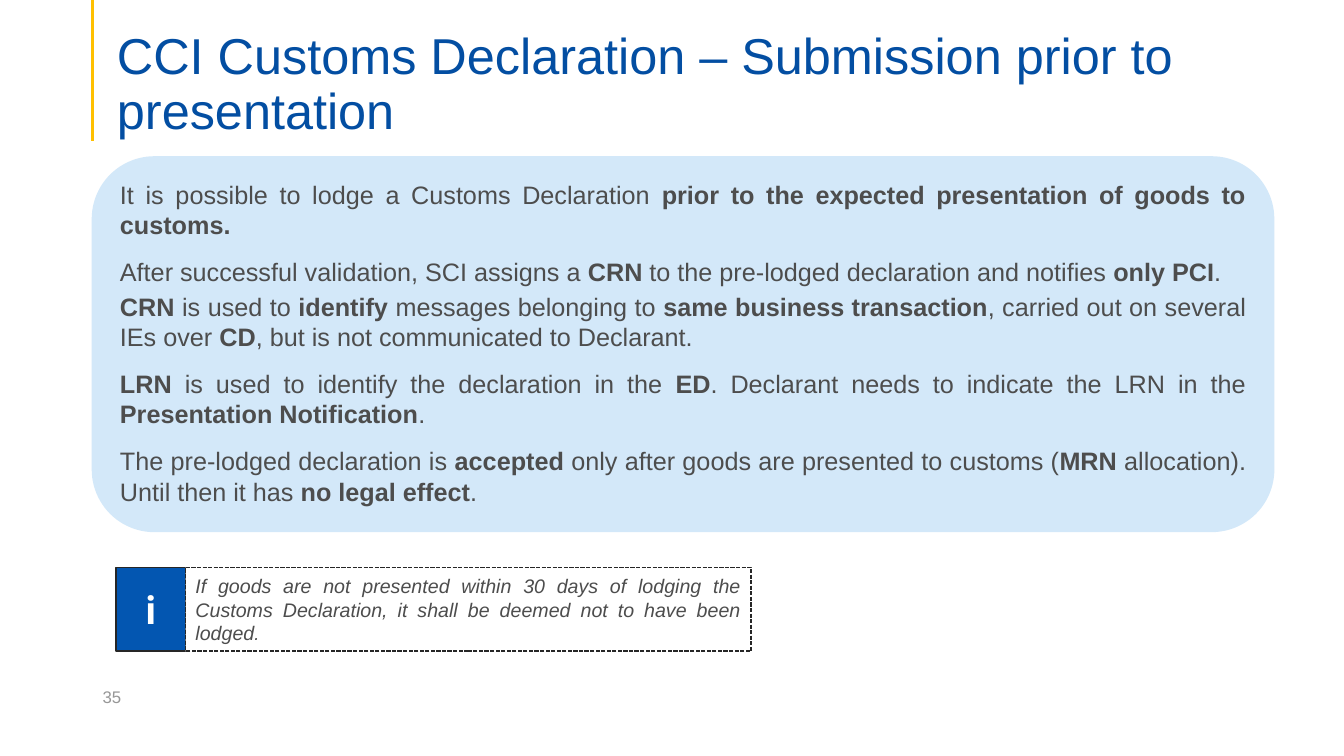
from lxml import etree
from pptx import Presentation
from pptx.dml.color import RGBColor
from pptx.enum.dml import MSO_LINE
from pptx.enum.shapes import MSO_CONNECTOR, MSO_SHAPE
from pptx.enum.text import MSO_ANCHOR, MSO_AUTO_SIZE, PP_ALIGN
from pptx.oxml.ns import qn
from pptx.util import Inches, Pt

RECT, ROUND = MSO_SHAPE.RECTANGLE, MSO_SHAPE.ROUNDED_RECTANGLE
TOP, MIDDLE, BOTTOM = MSO_ANCHOR.TOP, MSO_ANCHOR.MIDDLE, MSO_ANCHOR.BOTTOM
LEFT, CENTER, JUSTIFY = PP_ALIGN.LEFT, PP_ALIGN.CENTER, PP_ALIGN.JUSTIFY
DASH = MSO_LINE.SQUARE_DOT

TITLE = "CCI Customs Declaration – Submission prior to presentation"
BOLD_MARK = "**"
RULES = [
    (0, "It is possible to lodge a Customs Declaration **prior to the expected "
        "presentation of goods to customs.**"),
    (12, "After successful validation, SCI assigns a **CRN** to the pre-lodged "
         "declaration and notifies **only PCI**."),
    (3, "**CRN** is used to **identify** messages belonging to **same business "
        "transaction**, carried out on several IEs over **CD**, but is not "
        "communicated to Declarant."),
    (12, "**LRN** is used to identify the declaration in the **ED**. Declarant needs "
         "to indicate the LRN in the **Presentation Notification**."),
    (12, "The pre-lodged declaration is **accepted** only after goods are presented to "
         "customs (**MRN** allocation). Until then it has **no legal effect**."),
]
NOTE = ("If goods are not presented within 30 days of lodging the Customs Declaration, "
        "it shall be deemed not to have been lodged")
PAGE = "35"

BLUE, ICON_BLUE, PALE_BLUE = "034EA2", "0356B1", "D3E8F9"
GOLD, DARK, GREY, LIGHT_GREY, WHITE = "FFC000", "262626", "4D4D4D", "979797", "FFFFFF"
NOTE_TOP, NOTE_H = 5.63, 0.83
ICON_X, ICON_W, NOTE_W = 1.15, 0.69, 5.61


def rgb(value):
    return RGBColor.from_string(value)


def style(r, size, color, bold=False, italic=False, name="Arial"):
    r.font.size = Pt(size)
    r.font.name = name
    r.font.bold = bold
    r.font.italic = italic
    r.font.color.rgb = rgb(color)


def add_run(p, text, *args, **kwargs):
    r = p.add_run()
    r.text = text
    style(r, *args, **kwargs)


def frame(sp, anchor, align):
    tf = sp.text_frame
    tf.word_wrap = True
    tf.vertical_anchor = anchor
    tf.paragraphs[0].alignment = align
    return tf


def add_box(shapes, kind, x, y, w, h, fill, line=None):
    sp = shapes.add_shape(kind, Inches(x), Inches(y), Inches(w), Inches(h))
    sp.shadow.inherit = False
    sp.fill.solid()
    sp.fill.fore_color.rgb = rgb(fill)
    if line:
        sp.line.color.rgb = rgb(line)
        sp.line.width = Pt(1)
    else:
        sp.line.fill.background()
    return sp


def add_title(slide):
    sp = slide.shapes.title
    sp.left, sp.top, sp.width, sp.height = map(Inches, (1.06, 0.53, 12.03, 0.86))
    tf = frame(sp, BOTTOM, LEFT)
    tf.auto_size = MSO_AUTO_SIZE.NONE
    tf.margin_bottom = 0
    p = tf.paragraphs[0]
    p.line_spacing = 0.9
    add_run(p, TITLE, 36, BLUE)


def add_accent(slide):
    line = slide.shapes.add_connector(
        MSO_CONNECTOR.STRAIGHT, Inches(0.92), 0, Inches(0.92), Inches(1.4))
    line.line.color.rgb = rgb(GOLD)
    line.line.width = Pt(2.25)
    etree.SubElement(line._element.spPr, qn("a:effectLst"))


def add_rules(slide):
    panel = add_box(slide.shapes, ROUND, 0.91, 1.55, 11.73, 3.73, PALE_BLUE)
    tf = frame(panel, TOP, JUSTIFY)
    for i, (before, text) in enumerate(RULES):
        p = tf.add_paragraph() if i else tf.paragraphs[0]
        p.alignment = JUSTIFY
        if before:
            p.space_before = Pt(before)
        for j, part in enumerate(text.split(BOLD_MARK)):
            if part:
                add_run(p, part, 18, GREY, bold=j % 2 == 1)


def add_note(slide):
    shapes = slide.shapes.add_group_shape().shapes
    icon = add_box(shapes, RECT, ICON_X, NOTE_TOP, ICON_W, NOTE_H, ICON_BLUE, DARK)
    p = frame(icon, MIDDLE, CENTER).paragraphs[0]
    add_run(p, "i", 28, WHITE, bold=True, name="Roboto")
    note = add_box(shapes, RECT, ICON_X + ICON_W, NOTE_TOP, NOTE_W, NOTE_H, WHITE, DARK)
    note.line.dash_style = DASH
    p = frame(note, MIDDLE, JUSTIFY).paragraphs[0]
    add_run(p, NOTE, 14, GREY, italic=True)
    add_run(p, ".", 13, GREY, italic=True)


def add_page_number(slide):
    sp = slide.shapes.add_textbox(Inches(0.92), Inches(6.71), Inches(3), Inches(0.4))
    add_run(frame(sp, MIDDLE, LEFT).paragraphs[0], PAGE, 12, LIGHT_GREY)


def main():
    prs = Presentation()
    prs.slide_width, prs.slide_height = Inches(13.33), Inches(7.5)
    slide = prs.slides.add_slide(prs.slide_layouts[5])
    add_accent(slide)
    add_title(slide)
    add_rules(slide)
    add_note(slide)
    add_page_number(slide)
    prs.save("out.pptx")


if __name__ == "__main__":
    main()
